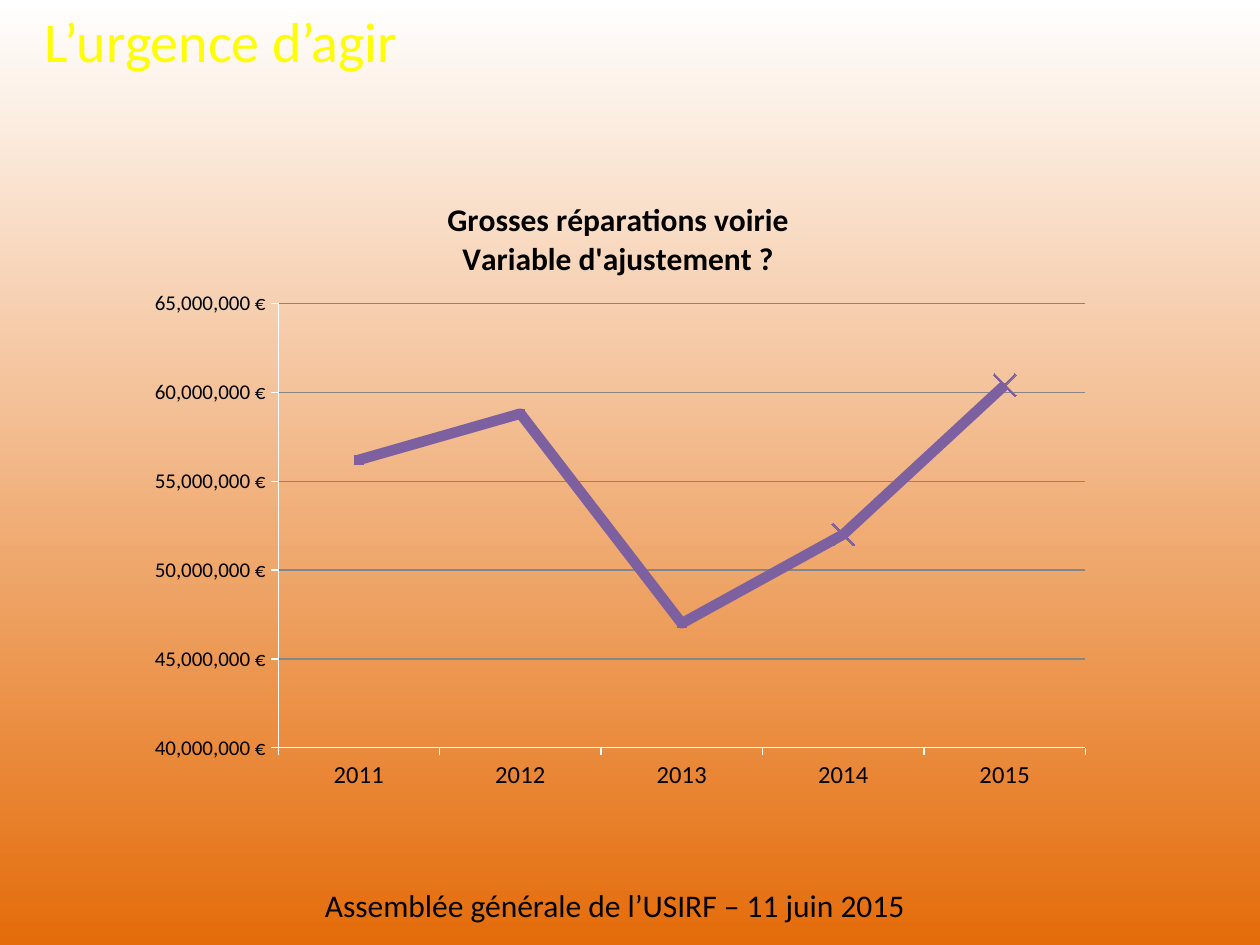
import pptx
import pptx.chart.data
import pptx.dml.color
import pptx.enum.chart
import pptx.enum.text
import pptx.oxml
import pptx.util
from dataclasses import dataclass

Inches = pptx.util.Inches
Pt = pptx.util.Pt
Color = pptx.dml.color.RGBColor.from_string
Align = pptx.enum.text.PP_ALIGN
Marker = pptx.enum.chart.XL_MARKER_STYLE


@dataclass(frozen=True)
class Theme:
    font: str = "Calibri"
    text: str = "000000"
    heading: str = "FFFF00"
    orange: str = "E46C0A"
    white: str = "FFFFFF"
    series: str = "7D60A0"
    alert: str = "FF0000"
    grid: str = "868686"
    heading_size: int = 32
    body_size: int = 18
    year_size: int = 14
    amount_size: int = 12
    chart_size: int = 10


theme = Theme()


def write_text(para, text, size=theme.body_size, color=theme.text, bold=False, align=None):
    para.alignment = align
    span = para.add_run()
    span.text = text
    span.font.name = theme.font
    span.font.size = Pt(size)
    span.font.bold = bold
    span.font.color.rgb = Color(color)


def set_layout(parent, index, target="", **fractions):
    for old in parent.findall(pptx.oxml.ns.qn("c:layout")):
        parent.remove(old)
    inner = f'<c:layoutTarget val="{target}"/>' if target else ""
    modes = '<c:xMode val="edge"/><c:yMode val="edge"/>'
    sizes = "".join(f'<c:{key} val="{value}"/>' for key, value in fractions.items())
    namespace = pptx.oxml.ns.nsdecls("c")
    parent.insert(index, pptx.oxml.parse_xml(
        f"<c:layout {namespace}><c:manualLayout>{inner}{modes}{sizes}</c:manualLayout></c:layout>"))


deck = pptx.Presentation()
deck.slide_width = Inches(10)
deck.slide_height = Inches(7.5)
page = deck.slides.add_slide(deck.slide_layouts[6])

background = page.background.fill
background.gradient()
background.gradient_angle = 90
for stop, color in zip(background.gradient_stops, (theme.orange, theme.white)):
    stop.color.rgb = Color(color)

heading = page.shapes.add_textbox(Inches(0.01), Inches(0), Inches(3.49), Inches(0.6))
heading.text_frame.word_wrap = True
write_text(heading.text_frame.paragraphs[0], "L’urgence d’agir",
           size=theme.heading_size, color=theme.heading, align=Align.CENTER)

footer = page.shapes.add_textbox(Inches(2.48), Inches(6.98), Inches(4.86), Inches(0.4))
footer.text_frame.word_wrap = False
footer.text_frame.auto_size = pptx.enum.text.MSO_AUTO_SIZE.SHAPE_TO_FIT_TEXT
write_text(footer.text_frame.paragraphs[0], "Assemblée générale de l’USIRF – 11 juin 2015")

repairs = pptx.chart.data.CategoryChartData(number_format='#,##0\\ "€"')
repairs.categories = ["2011", "2012", "2013", "2014", "2015"]
repairs.add_series("Series 1", (56200000, 58800000, 47000000, 52000000, 60400000))
chart = page.shapes.add_chart(
    pptx.enum.chart.XL_CHART_TYPE.LINE_MARKERS,
    Inches(1.05), Inches(1.35), Inches(7.72), Inches(5.04), repairs).chart
chart.has_legend = False
chart.font.name = theme.font
chart.font.size = Pt(theme.chart_size)
chart.font.color.rgb = Color(theme.text)

title = chart.chart_title
title_frame = title.text_frame
write_text(title_frame.paragraphs[0], "Grosses réparations voirie", bold=True, align=Align.CENTER)
write_text(title_frame.add_paragraph(), "Variable d'ajustement ?", bold=True, align=Align.CENTER)
title.include_in_layout = False
set_layout(title._element, 1, x=0.32, y=0.04)
set_layout(chart._chartSpace.chart.plotArea, 0, target="inner", x=0.15, y=0.21, w=0.83, h=0.7)

years, amounts = chart.category_axis, chart.value_axis
for axis, size in ((years, theme.year_size), (amounts, theme.amount_size)):
    axis.major_tick_mark = pptx.enum.chart.XL_TICK_MARK.OUTSIDE
    axis.minor_tick_mark = pptx.enum.chart.XL_TICK_MARK.NONE
    axis.tick_labels.font.name = theme.font
    axis.tick_labels.font.size = Pt(size)
    axis.tick_labels.font.color.rgb = Color(theme.text)
    axis.format.line.color.rgb = Color(theme.white)
    axis.format.line.width = Pt(0.75)
amounts.minimum_scale = 40000000
amounts.maximum_scale = 65000000
amounts.major_unit = 5000000
amounts.tick_labels.number_format = '#,##0\\ "€"'
amounts.tick_labels.number_format_is_linked = False
amounts.has_major_gridlines = True
amounts.major_gridlines.format.line.color.rgb = Color(theme.grid)
amounts.major_gridlines.format.line.width = Pt(0.75)

chart.plots[0].vary_by_categories = False
series = chart.plots[0].series[0]
series.smooth = False
series.format.line.color.rgb = Color(theme.series)
series.format.line.width = Pt(6)

square = (Marker.SQUARE, 5)
cross = (Marker.X, 13)
markers = [(*square, theme.series), (*square, theme.alert), (*square, theme.alert),
           (*cross, theme.white), (*cross, theme.white)]
for index, (style, size, color) in enumerate(markers):
    point = series.points[index]
    point.format.line.color.rgb = Color(theme.series)
    point.format.line.width = Pt(6)
    point.marker.style = style
    point.marker.size = size
    point.marker.format.fill.solid()
    point.marker.format.fill.fore_color.rgb = Color(color)
    point.marker.format.line.color.rgb = Color(color)

deck.save("out.pptx")
